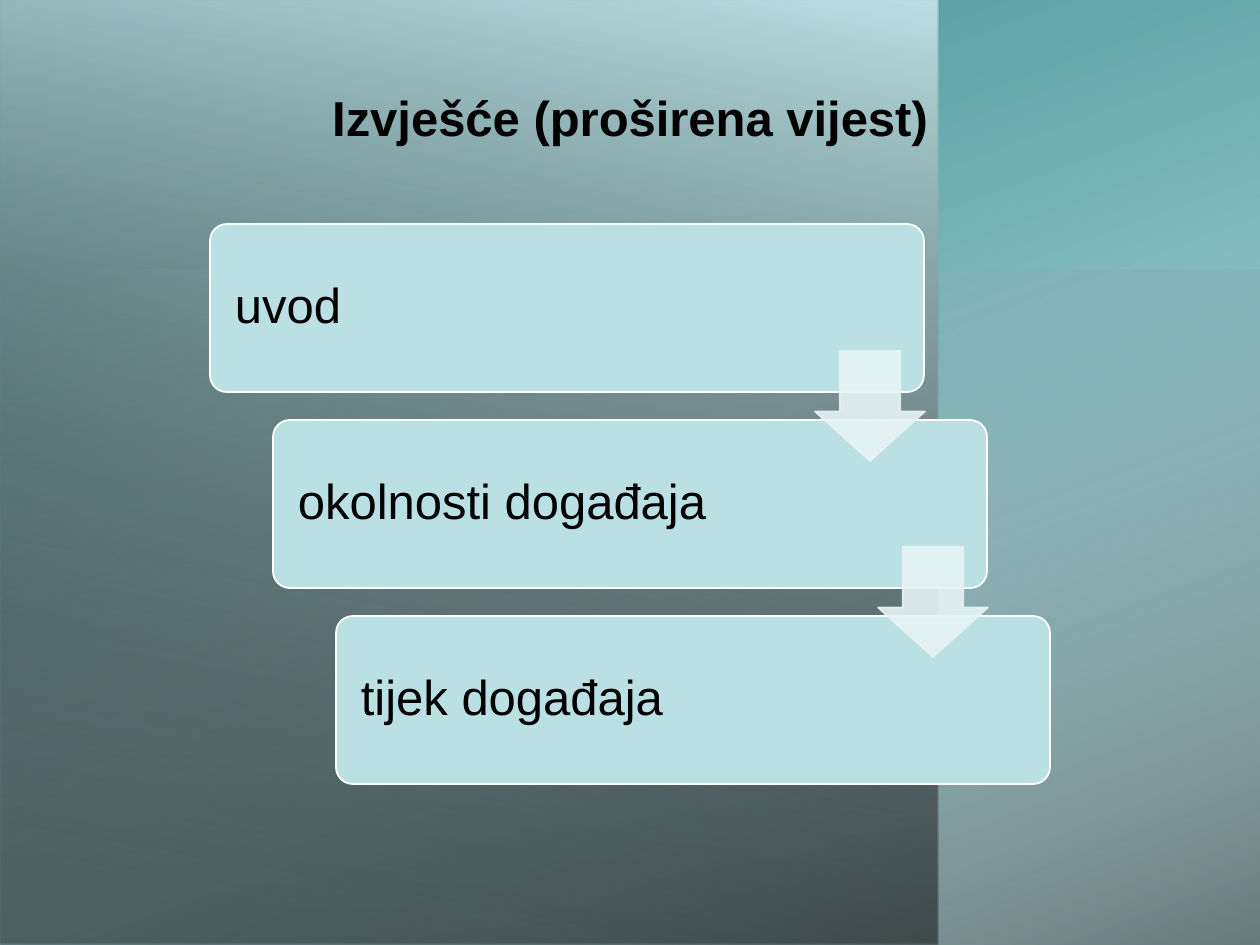
from dataclasses import dataclass

from lxml import etree
from pptx import Presentation
from pptx import util as u
from pptx.dml.color import RGBColor
from pptx.enum import shapes, text
from pptx.oxml.ns import qn

PX = u.Inches(1) / 126  # one scale for every length
COLORS = {
    "black": "000000", "white": "FFFFFF", "card": "BBE0E3",
    "teal": "3C8C93", "mist": "E9F4F5", "arrow": "E7F3F4",
}
FONT = {"name": "Arial", "size": u.Pt(28)}
STEPS = ["uvod", "okolnosti događaja", "tijek događaja"]
STEP_X, STEP_Y = 63, 196


@dataclass
class Box:
    left: int
    top: int
    width: int
    height: int

    def shifted(self, steps: int) -> "Box":
        return Box(self.left + steps * STEP_X, self.top + steps * STEP_Y,
                   self.width, self.height)

    def emu(self) -> list[int]:
        return [round(n * PX) for n in (self.left, self.top, self.width, self.height)]


@dataclass
class Stop:
    position: float
    color: str
    opacity: int = 100


@dataclass
class Panel:
    area: Box  # as seen, after turning
    rotation: int
    angle: int  # clockwise
    stops: tuple[Stop, Stop]


CARD = Box(210, 224, 714, 168)
ARROW = Box(815, 351, 110, 110)
PANELS = [
    Panel(Box(0, 0, 1260, 945), 270, 200, (Stop(0.08, "card"), Stop(1, "teal"))),
    Panel(Box(0, 0, 938, 945), 180, 80, (Stop(0.08, "black", 52), Stop(1, "card"))),
    Panel(Box(0, 270, 1260, 675), 270, 20, (Stop(0, "mist", 0), Stop(1, "black", 46))),
]


def rgb(name: str) -> RGBColor:
    return RGBColor.from_string(COLORS[name])


def set_opacity(parent, percent: int) -> None:
    for color in parent.iter(qn("a:srgbClr")):
        etree.SubElement(color, qn("a:alpha")).set("val", str(percent * 1000))


def set_format(target, values: dict) -> None:
    for key, value in values.items():
        setattr(target, key, value)


def add_plain(slide, kind, box: Box):
    shape = slide.shapes.add_shape(kind, *box.emu())
    shape.shadow.inherit = False
    return shape


def add_panel(slide, panel: Panel) -> None:
    shape = add_plain(slide, shapes.MSO_SHAPE.RECTANGLE, panel.area)
    if panel.rotation % 180:  # a quarter turn swaps the sides about the centre
        left, top, width, height = panel.area.emu()
        set_format(shape, {"left": left + (width - height) // 2,
                           "top": top + (height - width) // 2,
                           "width": height, "height": width})
    shape.rotation = panel.rotation
    shape._element.spPr.find(qn("a:xfrm")).set("flipH", "1")
    shape.line.fill.background()
    shape.fill.gradient()
    shape.fill.gradient_angle = 360 - panel.angle
    for target, stop in zip(shape.fill.gradient_stops, panel.stops):
        target.position = stop.position
        target.color.rgb = rgb(stop.color)
        if stop.opacity < 100:
            set_opacity(target._gs, stop.opacity)


def add_filled(slide, kind, box: Box, fill: str, line: str, adjustments: list[float]):
    shape = add_plain(slide, kind, box)
    shape.fill.solid()
    shape.fill.fore_color.rgb = rgb(fill)
    shape.line.color.rgb = rgb(line)
    shape.line.width = u.Pt(1)
    for index, value in enumerate(adjustments):
        shape.adjustments[index] = value
    return shape


def add_card(slide, box: Box, label: str) -> None:
    card = add_filled(slide, shapes.MSO_SHAPE.ROUNDED_RECTANGLE, box,
                      "card", "white", [0.1])
    set_format(card.text_frame, {
        "word_wrap": True, "vertical_anchor": text.MSO_ANCHOR.MIDDLE,
        "margin_left": round(20 * PX), "margin_right": round(20 * PX)})
    write(card.text_frame, label, text.PP_ALIGN.LEFT, FONT)
    card.text_frame.paragraphs[0].line_spacing = 0.9


def add_arrow(slide, box: Box) -> None:
    arrow = add_filled(slide, shapes.MSO_SHAPE.DOWN_ARROW, box,
                       "arrow", "arrow", [0.55, 0.45])
    set_opacity(arrow._element.spPr, 90)


def write(frame, words: str, alignment, font: dict) -> None:
    paragraph = frame.paragraphs[0]
    paragraph.alignment = alignment
    run = paragraph.add_run()
    run.text = words
    set_format(run.font, font)
    run.font.color.rgb = rgb("black")


def main() -> None:
    deck = Presentation()
    deck.slide_width, deck.slide_height = u.Inches(10), u.Inches(7.5)
    slide = deck.slides.add_slide(deck.slide_layouts[5])
    title = slide.shapes.title

    # Background panels, behind the title
    for panel in PANELS:
        add_panel(slide, panel)
    slide.shapes._spTree.append(title._element)

    # Title
    left, top, width, height = Box(63, 38, 1134, 158).emu()
    set_format(title, {"left": left, "top": top, "width": width, "height": height})
    title.text_frame.vertical_anchor = text.MSO_ANCHOR.MIDDLE
    write(title.text_frame, "Izvješće (proširena vijest)",
          text.PP_ALIGN.CENTER, FONT | {"bold": True})

    # Staircase of steps, then the arrows between them
    for index, label in enumerate(STEPS):
        add_card(slide, CARD.shifted(index), label)
    for index in range(len(STEPS) - 1):
        add_arrow(slide, ARROW.shifted(index))

    deck.save("out.pptx")


if __name__ == "__main__":
    main()
